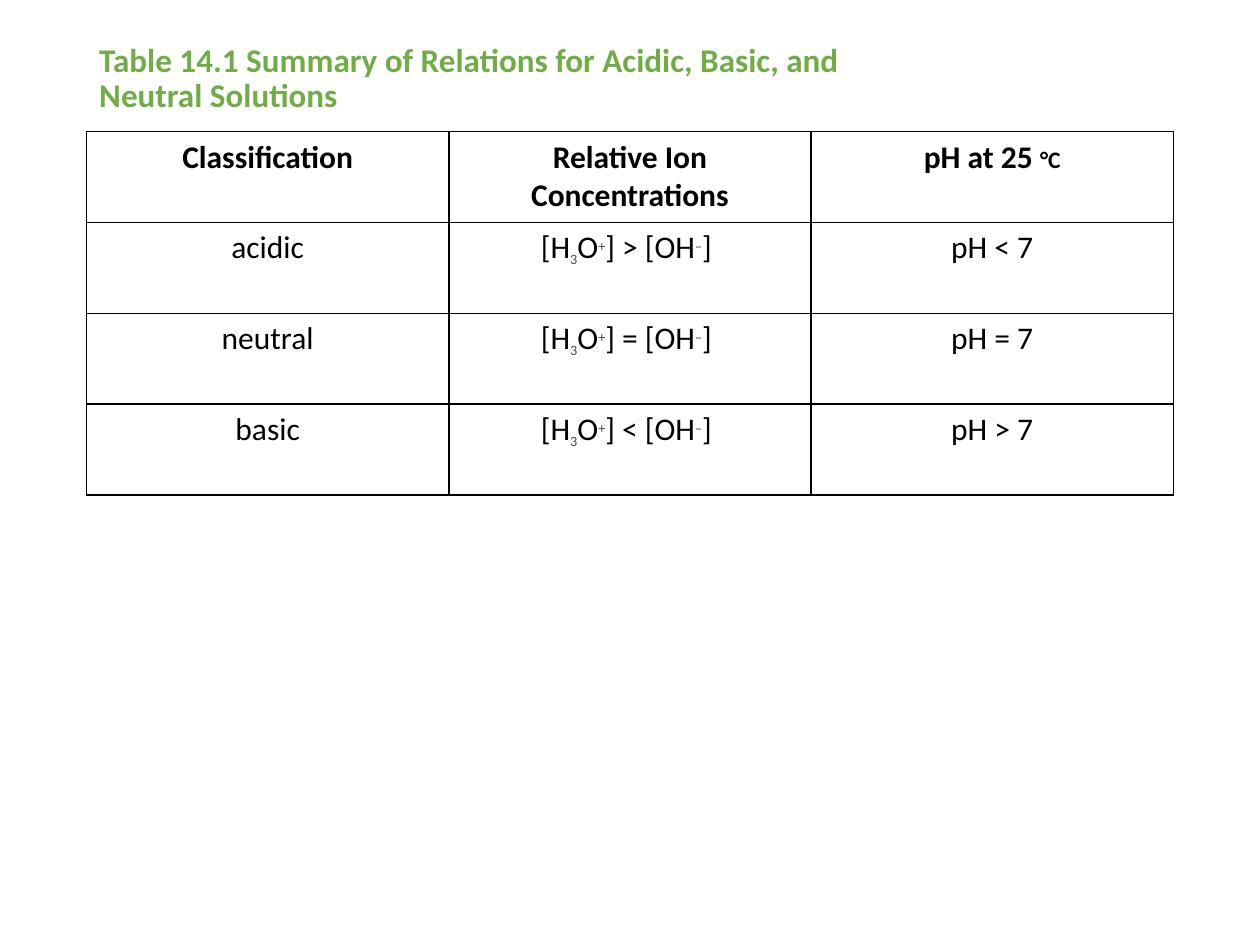
from lxml import etree
from pptx import Presentation
from pptx.dml.color import RGBColor
from pptx.enum.text import MSO_ANCHOR, MSO_AUTO_SIZE, PP_ALIGN
from pptx.oxml.ns import qn
from pptx.util import Pt

BLACK = RGBColor(0x00, 0x00, 0x00)
GREEN = RGBColor(0x70, 0xAD, 0x47)
GRAY = RGBColor(0x46, 0x48, 0x46)
LEFT = PP_ALIGN.LEFT
CENTER = PP_ALIGN.CENTER
MIDDLE = MSO_ANCHOR.MIDDLE
NO_AUTOFIT = MSO_AUTO_SIZE.NONE

FONT = "Calibri"
MARGIN, CONTENT_WIDTH = 49.5, 621
TITLE_TOP, TITLE_HEIGHT = 28.8, 33.1
TABLE_TOP, ROW_HEIGHT = 75.3, 51.9
SUBSCRIPT, SUPERSCRIPT = -25000, 30000
TITLE = "Table 14.1 Summary of Relations for Acidic, Basic, and \vNeutral Solutions"
HEADERS = ["Classification", "Relative Ion Concentrations", "pH at 25 "]
RELATIONS = [("acidic", ">", "<"), ("neutral", "=", "="), ("basic", "<", ">")]


def format_font(font, size, color, bold=False):
    """Apply the slide's typeface with a size, colour and weight."""
    font.name = FONT
    font.size = Pt(size)
    font.color.rgb = color
    font.bold = bold


def add_run(paragraph, text, size=18, color=BLACK, bold=False, baseline=0):
    """Append a formatted run, optionally raised or lowered."""
    run = paragraph.add_run()
    run.text = text
    format_font(run.font, size, color, bold)
    if baseline:
        run.font._element.set("baseline", str(baseline))


def add_title(slide):
    """Place and format the title placeholder."""
    title = slide.shapes.title
    title.left, title.top = Pt(MARGIN), Pt(TITLE_TOP)
    title.width, title.height = Pt(CONTENT_WIDTH), Pt(TITLE_HEIGHT)
    frame = title.text_frame
    frame.text = TITLE
    frame.word_wrap = True
    frame.auto_size = NO_AUTOFIT
    frame.vertical_anchor = MIDDLE
    paragraph = frame.paragraphs[0]
    paragraph.alignment = LEFT
    paragraph.line_spacing = 0.9
    format_font(paragraph.font, 18.9, GREEN, True)


def add_borders(cell):
    """Draw a one-point black line on every side of a cell."""
    properties = cell._tc.get_or_add_tcPr()
    for side in ("lnL", "lnR", "lnT", "lnB"):
        line = etree.SubElement(properties, qn(f"a:{side}"), w=str(Pt(1)))
        fill = etree.SubElement(line, qn("a:solidFill"))
        etree.SubElement(fill, qn("a:srgbClr"), val=str(BLACK))


def write_cell(cell, text, bold=False):
    """Write centred text in a cell and return its paragraph."""
    paragraph = cell.text_frame.paragraphs[0]
    paragraph.alignment = CENTER
    if text:
        paragraph.text = text
        format_font(paragraph.font, 18, BLACK, bold)
    add_borders(cell)
    cell.fill.background()
    return paragraph


def write_ion_relation(cell, sign):
    """Write the hydronium and hydroxide comparison in a cell."""
    paragraph = write_cell(cell, "")
    add_run(paragraph, "[H")
    add_run(paragraph, "3", 14, GRAY, baseline=SUBSCRIPT)
    add_run(paragraph, "O")
    add_run(paragraph, "+", 14, GRAY, baseline=SUPERSCRIPT)
    add_run(paragraph, f"] {sign} [OH")
    add_run(paragraph, "–", 14, GRAY, baseline=SUPERSCRIPT)
    add_run(paragraph, "] ")


def add_relations_table(slide):
    """Add the table relating ion concentrations to pH."""
    row_count = len(RELATIONS) + 1
    table = slide.shapes.add_table(
        row_count, len(HEADERS), Pt(MARGIN), Pt(TABLE_TOP),
        Pt(CONTENT_WIDTH), Pt(ROW_HEIGHT * row_count)).table
    table.first_row = False
    table.horz_banding = False
    for column, header in enumerate(HEADERS[:-1]):
        write_cell(table.cell(0, column), header, True)
    temperature = write_cell(table.cell(0, 2), "")
    add_run(temperature, HEADERS[-1], bold=True)
    add_run(temperature, "°C", 13.5, bold=True)
    for row, (name, ion_sign, ph_sign) in enumerate(RELATIONS, start=1):
        write_cell(table.cell(row, 0), name)
        write_ion_relation(table.cell(row, 1), ion_sign)
        write_cell(table.cell(row, 2), f"pH {ph_sign} 7")


def main():
    """Build and save the slide."""
    presentation = Presentation()
    presentation.slide_width, presentation.slide_height = Pt(720), Pt(540)
    slide = presentation.slides.add_slide(presentation.slide_layouts[5])
    add_title(slide)
    add_relations_table(slide)
    presentation.save("out.pptx")


if __name__ == "__main__":
    main()
